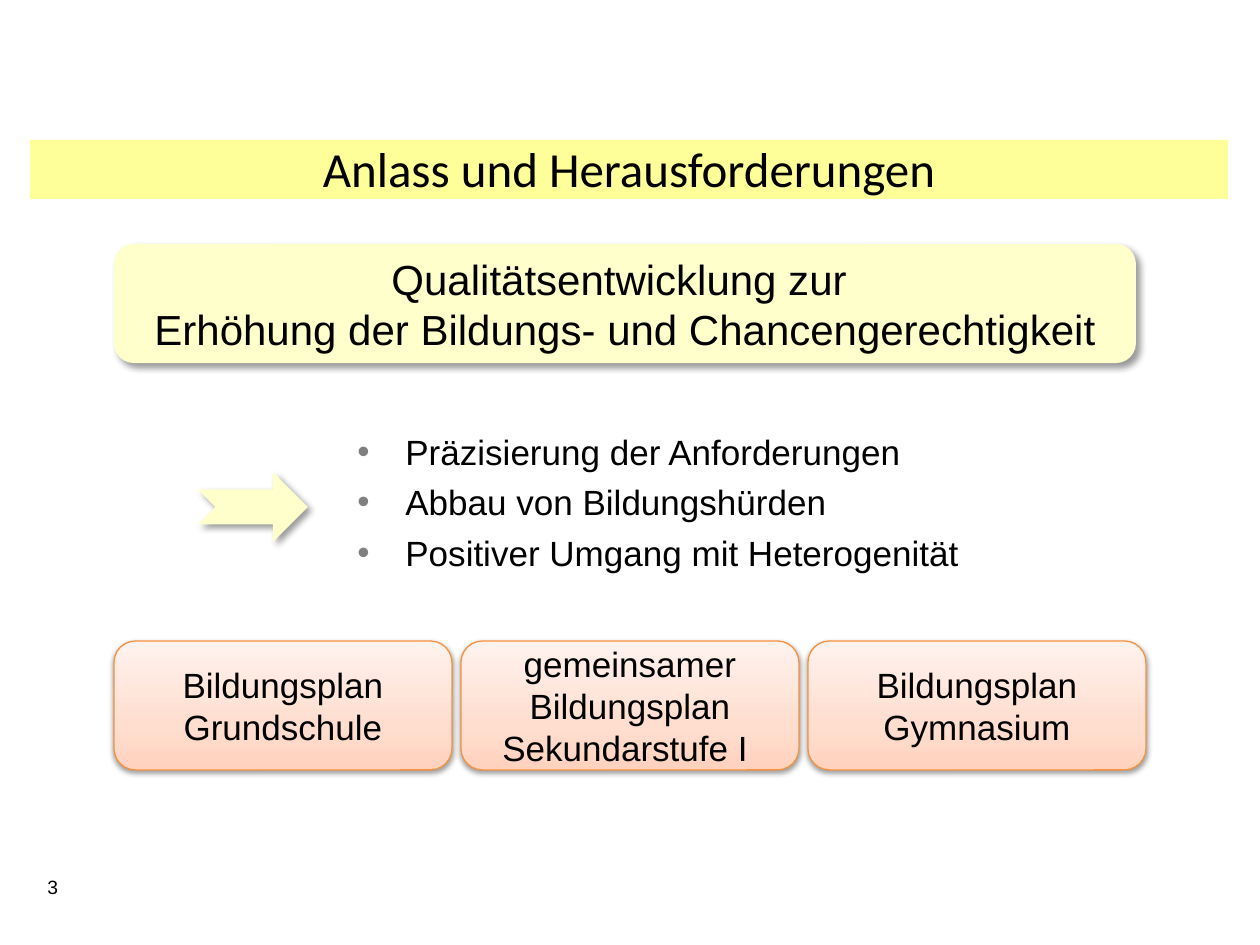
from lxml import etree
from pptx import Presentation
from pptx.dml.color import RGBColor
from pptx.enum.shapes import MSO_SHAPE
from pptx.enum.text import MSO_ANCHOR, PP_ALIGN
from pptx.oxml.ns import qn
from pptx.util import Emu, Pt

PX = 914400 / 126
RECT = MSO_SHAPE.RECTANGLE
ROUNDED = MSO_SHAPE.ROUNDED_RECTANGLE
NOTCHED_ARROW = MSO_SHAPE.NOTCHED_RIGHT_ARROW
LEFT, CENTER = PP_ALIGN.LEFT, PP_ALIGN.CENTER
TOP, MIDDLE = MSO_ANCHOR.TOP, MSO_ANCHOR.MIDDLE

BLACK = RGBColor(0x00, 0x00, 0x00)
GREY = RGBColor(0x7F, 0x7F, 0x7F)
YELLOW = RGBColor(0xFF, 0xFF, 0x99)
CREAM = RGBColor(0xFF, 0xFF, 0xCC)
ORANGE = RGBColor(0xF6, 0x92, 0x40)
PEACH_STOPS = [
    (0, RGBColor(0xFF, 0xD2, 0xBD)),
    (35, RGBColor(0xFF, 0xDE, 0xD0)),
    (100, RGBColor(0xFF, 0xF2, 0xED)),
]

# Opacity in percent, blur and distance in points, direction in degrees
SOFT_SHADOW = (40, 4, 3, 45)
LOW_SHADOW = (38, 3.1, 1.6, 90)

GOALS = [
    "Präzisierung der Anforderungen",
    "Abbau von Bildungshürden",
    "Positiver Umgang mit Heterogenität",
]
PLANS = [
    ["Bildungsplan Grundschule"],
    ["gemeinsamer Bildungsplan Sekundarstufe I "],
    ["Bildungsplan", "Gymnasium"],
]


def px(*lengths):
    return [Emu(round(length * PX)) for length in lengths]


def add_element(parent, tag, **attributes):
    values = {name: str(value) for name, value in attributes.items()}
    return etree.SubElement(parent, qn(tag), values)


def add_color(parent, color):
    return add_element(parent, "a:srgbClr", val=color)


def add_bullet(para):
    properties = para._p.get_or_add_pPr()
    indent = px(48)[0]
    properties.set("marL", str(indent))
    properties.set("indent", str(-indent))
    add_color(add_element(properties, "a:buClr"), GREY)
    add_element(properties, "a:buFont", typeface="Arial")
    add_element(properties, "a:buChar", char="•")


def write_text(frame, lines, size, font="Arial", align=LEFT, anchor=TOP,
               bullets=False):
    frame.word_wrap = True
    frame.vertical_anchor = anchor
    for index, line in enumerate(lines):
        para = frame.add_paragraph() if index else frame.paragraphs[0]
        para.alignment = align
        if bullets:
            if index:
                para.space_before = Pt(5)
            add_bullet(para)
        span = para.add_run()
        span.text = line
        span.font.size = Pt(size)
        span.font.name = font
        span.font.color.rgb = BLACK


def add_text_box(page, place, lines, size, **style):
    box = page.shapes.add_textbox(*px(*place))
    write_text(box.text_frame, lines, size, **style)


def set_shadow(shape, opacity, blur, distance, direction):
    effects = shape._element.spPr.find(qn("a:effectLst"))
    shadow = add_element(effects, "a:outerShdw", blurRad=Pt(blur),
                         dist=Pt(distance), dir=direction * 60000,
                         algn="tl", rotWithShape=0)
    add_element(add_color(shadow, BLACK), "a:alpha", val=opacity * 1000)


def add_panel(page, kind, place, color=None, shadow=None):
    shape = page.shapes.add_shape(kind, *px(*place))
    shape.shadow.inherit = False
    shape.line.fill.background()
    if color is not None:
        shape.fill.solid()
        shape.fill.fore_color.rgb = color
    if shadow:
        set_shadow(shape, *shadow)
    return shape


def set_gradient(shape, stops):
    """Blend the stops from the bottom edge to the top edge."""
    shape.fill.gradient()
    shape.fill.gradient_angle = 90
    stop_list = shape._element.spPr.find(".//" + qn("a:gsLst"))
    for stop in list(stop_list):
        stop_list.remove(stop)
    for percent, color in stops:
        add_color(add_element(stop_list, "a:gs", pos=percent * 1000), color)


def add_title(page, text):
    title = page.shapes.title
    title.left, title.top, title.width, title.height = px(30, 132, 1198, 72)
    write_text(title.text_frame, [text], 28, "Calibri", CENTER, MIDDLE)
    bar = add_panel(page, RECT, (30, 140, 1198, 59), YELLOW)
    title._element.addprevious(bar._element)


def add_plan(page, left, lines):
    plan = add_panel(page, ROUNDED, (left, 641, 338, 129), shadow=LOW_SHADOW)
    set_gradient(plan, PEACH_STOPS)
    plan.line.color.rgb = ORANGE
    plan.line.width = Pt(0.75)
    write_text(plan.text_frame, lines, 20, align=CENTER, anchor=MIDDLE)


def main():
    deck = Presentation()
    deck.slide_width, deck.slide_height = px(1260, 945)
    page = deck.slides.add_slide(deck.slide_layouts[5])

    add_title(page, "Anlass und Herausforderungen")
    add_text_box(page, (345, 424, 833, 159), GOALS, 20, bullets=True)
    add_panel(page, NOTCHED_ARROW, (198, 472, 110, 70), CREAM, SOFT_SHADOW)
    add_text_box(page, (35, 869, 69, 37), ["3"], 11)

    aim = add_panel(page, ROUNDED, (114, 244, 1022, 119), CREAM, SOFT_SHADOW)
    write_text(aim.text_frame,
               ["Qualitätsentwicklung zur ",
                "Erhöhung der Bildungs- und Chancengerechtigkeit"],
               24, align=CENTER, anchor=MIDDLE)

    for index, lines in enumerate(PLANS):
        add_plan(page, 114 + index * 347, lines)

    deck.save("out.pptx")


if __name__ == "__main__":
    main()
